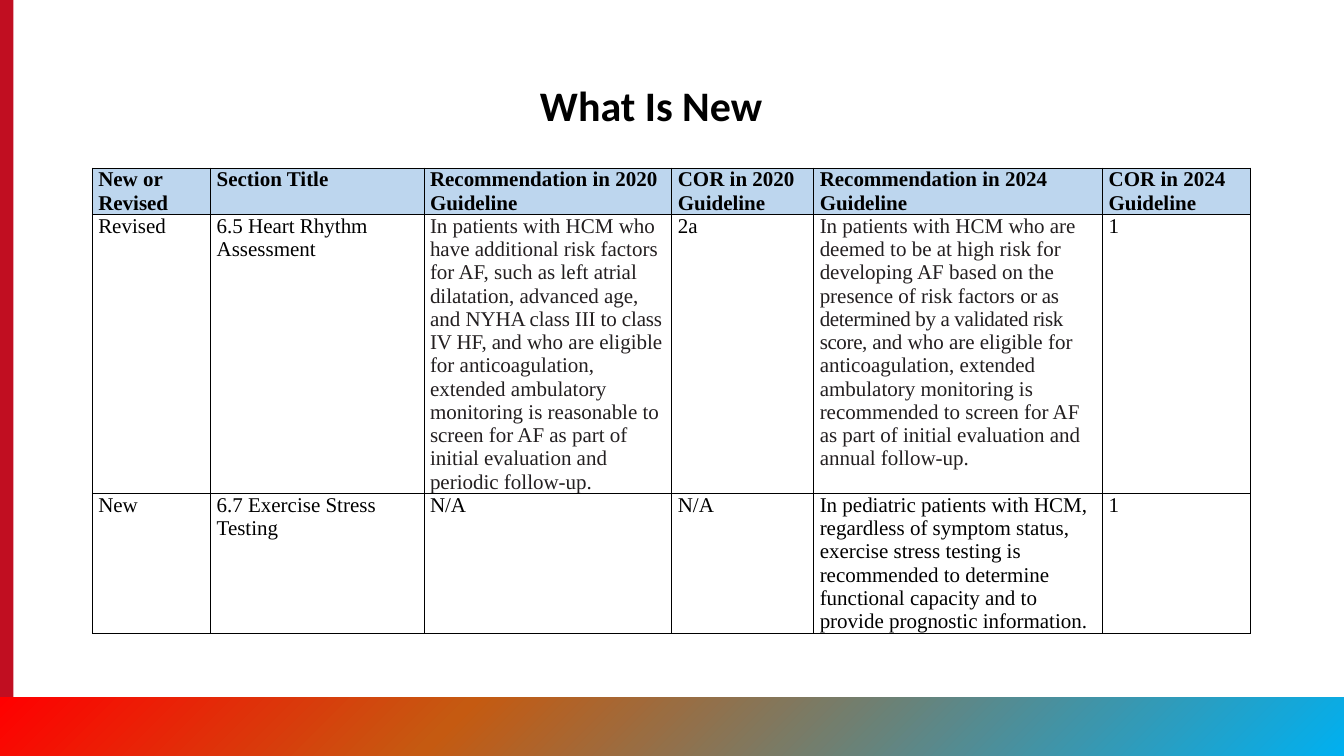
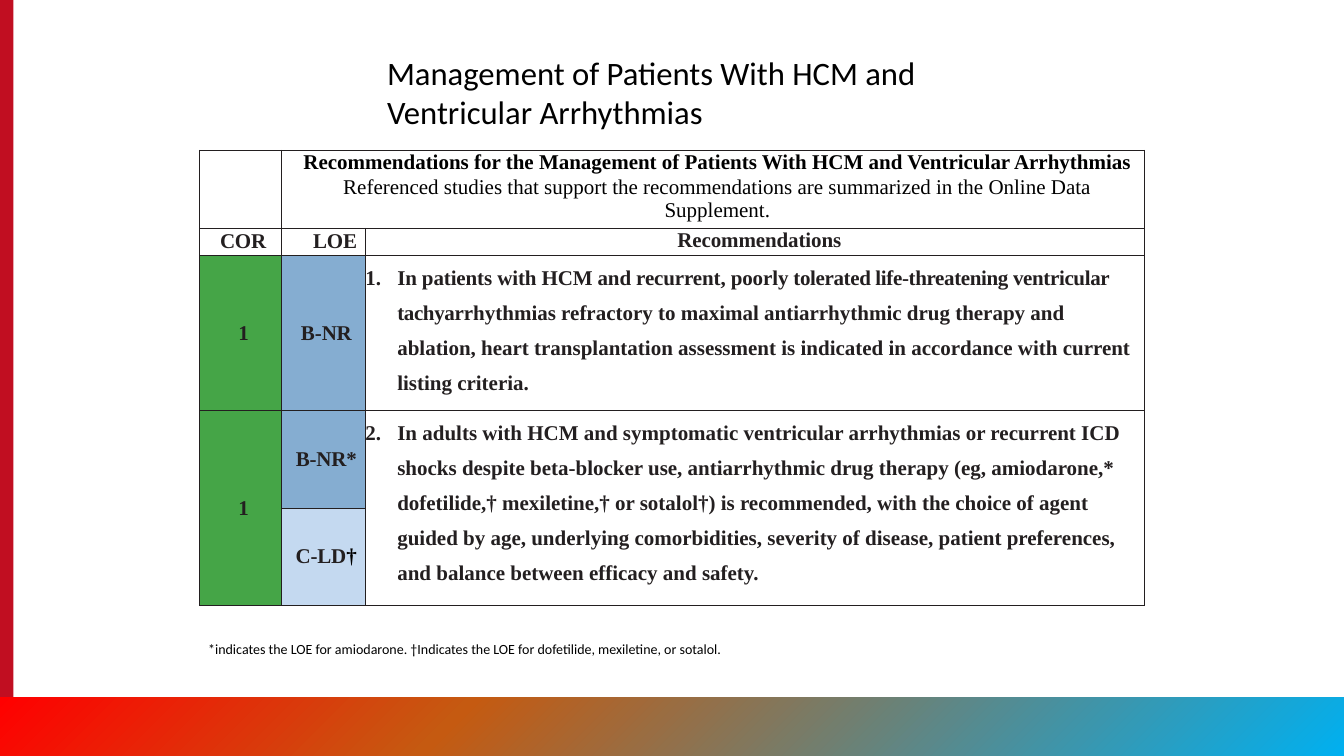
from dataclasses import dataclass
from typing import Optional

from lxml.etree import SubElement
from pptx import Presentation
from pptx.dml.color import RGBColor
from pptx.enum.shapes import MSO_SHAPE
from pptx.enum.text import MSO_ANCHOR, PP_ALIGN
from pptx.oxml.ns import qn
from pptx.util import Inches, Pt

SLIDE_W, SLIDE_H = 16, 9
BAND_TOP, STRIPE_W = 8.3, 0.16

BLACK = RGBColor(0x00, 0x00, 0x00)
INK = RGBColor(0x23, 0x1F, 0x20)
CRIMSON = RGBColor(0xC1, 0x0E, 0x21)
RED = RGBColor(0xFF, 0x00, 0x00)
ORANGE = RGBColor(0xC5, 0x5A, 0x11)
SKY = RGBColor(0x00, 0xB0, 0xF0)
HEADER_BLUE = RGBColor(0xBD, 0xD6, 0xEE)
COR_GREEN = RGBColor(0x45, 0xA5, 0x47)
LOE_BLUE = RGBColor(0x85, 0xAD, 0xD1)
LOE_PALE = RGBColor(0xC4, 0xD9, 0xF0)

BAND_STOPS = [(0, RED), (34, ORANGE), (100, SKY)]
TITLE_FONT, TABLE_FONT = "Calibri", "Times New Roman"
TABLE_SIZE = 18


@dataclass(frozen=True)
class Span:
    text: str
    colour: RGBColor = BLACK
    bold: bool = False
    tracking: float = 0


@dataclass(frozen=True)
class Para:
    spans: tuple[Span, ...]
    centred: bool = False
    left: float = 0
    hanging: float = 0
    before: float = 0
    number: Optional[int] = None


@dataclass(frozen=True)
class Cell:
    paras: tuple[Para, ...]
    fill: Optional[RGBColor] = None
    middle: bool = False
    rows: int = 1
    cols: int = 1


@dataclass(frozen=True)
class Grid:
    left: float
    top: float
    cols: tuple[float, ...]
    rows: tuple[float, ...]
    side_inset: float
    border: RGBColor


def add_span(paragraph, span: Span, font: str, size: float) -> None:
    run = paragraph.add_run()
    run.text = span.text
    run.font.name = font
    run.font.size = Pt(size)
    run.font.bold = span.bold
    run.font.color.rgb = span.colour
    if span.tracking:
        run._r.get_or_add_rPr().set("spc", str(round(span.tracking * 100)))


def add_solid(parent, colour: RGBColor) -> None:
    fill = SubElement(parent, qn("a:solidFill"))
    SubElement(fill, qn("a:srgbClr"), val=str(colour))


def number_paragraph(paragraph, start: int) -> None:
    properties = paragraph._p.get_or_add_pPr()
    colour = SubElement(properties, qn("a:buClr"))
    SubElement(colour, qn("a:srgbClr"), val=str(INK))
    SubElement(properties, qn("a:buFont"), typeface=TABLE_FONT)
    SubElement(properties, qn("a:buAutoNum"), type="arabicPeriod", startAt=str(start))
    paragraph.line_spacing = 1.5


def fill_paragraph(paragraph, para: Para) -> None:
    properties = paragraph._p.get_or_add_pPr()
    properties.set("marL", str(Inches(para.left)))
    properties.set("indent", str(Inches(para.hanging)))
    if para.number:
        number_paragraph(paragraph, para.number)
    if para.before:
        paragraph.space_before = Pt(para.before)
    paragraph.alignment = PP_ALIGN.CENTER if para.centred else PP_ALIGN.LEFT
    for span in para.spans:
        add_span(paragraph, span, TABLE_FONT, TABLE_SIZE)


def style_cell(cell, grid: Grid) -> None:
    cell.margin_left = cell.margin_right = Inches(grid.side_inset)
    cell.margin_top = cell.margin_bottom = 0
    properties = cell._tc.get_or_add_tcPr()
    for side in ("lnL", "lnR", "lnT", "lnB"):
        line = SubElement(properties, qn(f"a:{side}"), w=str(Pt(1)))
        add_solid(line, grid.border)
    cell.fill.background()


def fill_cell(cell, content: Cell) -> None:
    if content.fill is not None:
        cell.fill.solid()
        cell.fill.fore_color.rgb = content.fill
    cell.vertical_anchor = MSO_ANCHOR.MIDDLE if content.middle else MSO_ANCHOR.TOP
    frame = cell.text_frame
    for index, para in enumerate(content.paras):
        fill_paragraph(frame.add_paragraph() if index else frame.paragraphs[0], para)


def add_grid(slide, grid: Grid, contents: list[list[Optional[Cell]]]) -> None:
    """Draw a bordered table; None leaves a cell empty or covered by a merge."""
    table = slide.shapes.add_table(
        len(grid.rows), len(grid.cols), Inches(grid.left), Inches(grid.top),
        Inches(sum(grid.cols)), Inches(sum(grid.rows))).table
    table.first_row = table.horz_banding = False
    for column, width in zip(table.columns, grid.cols):
        column.width = Inches(width)
    for row, height in zip(table.rows, grid.rows):
        row.height = Inches(height)
    for r, row_contents in enumerate(contents):
        for c, content in enumerate(row_contents):
            cell = table.cell(r, c)
            style_cell(cell, grid)
            if content is None:
                continue
            if content.rows * content.cols > 1:
                cell.merge(table.cell(r + content.rows - 1, c + content.cols - 1))
            fill_cell(cell, content)


def add_bar(slide, left: float, top: float, width: float, height: float):
    bar = slide.shapes.add_shape(
        MSO_SHAPE.RECTANGLE, Inches(left), Inches(top), Inches(width), Inches(height))
    bar.shadow.inherit = False
    bar.line.fill.background()
    return bar


def add_base_slide(deck):
    """Add a blank slide with the side stripe and the gradient footer band."""
    slide = deck.slides.add_slide(deck.slide_layouts[6])
    stripe = add_bar(slide, 0, 0, STRIPE_W, SLIDE_H)
    stripe.fill.solid()
    stripe.fill.fore_color.rgb = CRIMSON

    band = add_bar(slide, 0, BAND_TOP, SLIDE_W, SLIDE_H - BAND_TOP)
    band.fill.gradient()
    gradient = band._element.spPr.find(qn("a:gradFill"))
    for child in list(gradient):
        gradient.remove(child)
    stops = SubElement(gradient, qn("a:gsLst"))
    for percent, colour in BAND_STOPS:
        stop = SubElement(stops, qn("a:gs"), pos=str(percent * 1000))
        SubElement(stop, qn("a:srgbClr"), val=str(colour))
    SubElement(gradient, qn("a:lin"), ang=str(45 * 60000), scaled="0")
    return slide


def add_label(slide, box: tuple[float, float, float, float], span: Span, size: float,
              anchor: MSO_ANCHOR = MSO_ANCHOR.TOP) -> None:
    frame = slide.shapes.add_textbox(*map(Inches, box)).text_frame
    frame.word_wrap = True
    frame.vertical_anchor = anchor
    add_span(frame.paragraphs[0], span, TITLE_FONT, size)


def plain(*spans: Span, fill: Optional[RGBColor] = None) -> Cell:
    return Cell((Para(spans),), fill)


def centred(*spans: Span, left: float, hanging: float = 0, fill: Optional[RGBColor] = None,
            middle: bool = True, rows: int = 1) -> Cell:
    return Cell((Para(spans, True, left, hanging),), fill, middle, rows)


def numbered(number: int, *spans: Span, rows: int = 1) -> Cell:
    return Cell((Para(spans, left=0.38, hanging=-0.38, number=number),), rows=rows)


def strong(text: str, tracking: float = 0) -> Span:
    return Span(text, INK, True, tracking)


def add_whats_new(deck) -> None:
    slide = add_base_slide(deck)
    headings = ("New or Revised", "Section Title", "Recommendation in 2020 Guideline",
                "COR in 2020 Guideline", "Recommendation in 2024 Guideline",
                "COR in 2024 Guideline")
    rhythm_2020 = plain(
        Span("In patients with HCM who have additional risk factors for AF, such as left "
             "atrial dilatation, advanced age, and ", INK),
        Span("NYHA class III to class IV HF, and", INK, tracking=-0.1),
        Span(" who are eligible for anticoagulation, extended ambulatory monitoring is "
             "reasonable to screen for AF as part of initial evaluation and periodic "
             "follow-up.", INK))
    rhythm_2024 = plain(
        Span("In patients with HCM who are deemed to be at high risk for developing AF "
             "based on the presence of risk factors ", INK),
        Span("or as determined by a validated risk score, ", INK, tracking=-0.3),
        Span("and", INK, tracking=-0.1),
        Span(" who are eligible for anticoagulation, extended ambulatory monitoring is "
             "recommended to screen for AF as part of initial evaluation and annual "
             "follow-up.", INK))
    exercise_2024 = ("In pediatric patients with HCM, regardless of symptom status, exercise "
                     "stress testing is recommended to determine functional capacity and to "
                     "provide prognostic information.")
    changes = [
        [plain(Span(heading, bold=True), fill=HEADER_BLUE) for heading in headings],
        [plain(Span("Revised")), plain(Span("6.5 Heart Rhythm Assessment")), rhythm_2020,
         plain(Span("2a")), rhythm_2024, plain(Span("1"))],
        [plain(Span(text)) for text in
         ("New", "6.7 Exercise Stress Testing", "N/A", "N/A", exercise_2024, "1")],
    ]
    grid = Grid(1.1, 2, (1.41, 2.54, 2.95, 1.69, 3.44, 1.76), (0.54, 3.3, 1.65), 0.07, BLACK)
    add_grid(slide, grid, changes)
    add_label(slide, (6.33, 0.92, 3.33, 0.67), Span("What Is New", bold=True), 36,
              MSO_ANCHOR.BOTTOM)


def add_arrhythmias(deck) -> None:
    slide = add_base_slide(deck)
    add_label(slide, (4.51, 0.58, 6.99, 1.04),
              Span("Management of Patients With HCM and Ventricular Arrhythmias"), 28)
    heading = Cell((
        Para((Span("Recommendations for the Management of Patients With HCM and "
                   "Ventricular Arrhythmias", bold=True),), True, 0.1),
        Para((Span("Referenced studies that support the recommendations are summarized in "
                   "the Online Data Supplement."),), True, 0.1, before=2),
    ), cols=2)
    transplant = numbered(
        1,
        strong("In patients with HCM and recurrent, poorly ", -0.1),
        strong("tolerated life-threatening ventricular tachyar", -0.3),
        strong("rhythmias refractory to maximal antiarrhythmic drug therapy and ablation, "
               "heart transplantation assessment is indicated in accordance with current "
               "listing criteria."))
    drug_therapy = numbered(
        2,
        strong("In adults with HCM and symptomatic ventricular arrhythmias or recurrent ICD "
               "shocks despite beta-blocker use, antiarrhythmic drug therapy (eg, "
               "amiodarone,* dofetilide,† mexiletine,† or sotalol†) is recommended, with "
               "the choice of agent guided by age, underlying comorbidities, severity of "
               "disease, patient preferences, and balance between efficacy and safety."),
        rows=2)
    recommendations = [
        [None, heading, None],
        [centred(strong("COR", -0.2), left=0.06), centred(strong("LOE", -0.2), left=0.28),
         centred(strong("Recommendations", -0.1), left=0.1, middle=False)],
        [centred(strong("1"), left=0.07, fill=COR_GREEN),
         centred(strong("B-"), strong("NR", -0.2), left=0.07, fill=LOE_BLUE), transplant],
        [centred(strong("1"), left=0.07, fill=COR_GREEN, rows=2),
         centred(strong("B-NR*", -0.2), left=0.26, hanging=-0.19, fill=LOE_BLUE),
         drug_therapy],
        [None, centred(strong("C-LD", -0.2), Span("†", BLACK, True, -0.2), left=0.26,
                       hanging=-0.19, fill=LOE_PALE), None],
    ]
    grid = Grid(2.38, 1.79, (0.97, 1, 9.28), (0.92, 0.32, 1.85, 1.16, 1.16), 0, INK)
    add_grid(slide, grid, recommendations)
    add_label(slide, (2.38, 7.58, 8, 0.3),
              Span("*indicates the LOE for amiodarone. †Indicates the LOE for dofetilide, "
                   "mexiletine, or sotalol."), 12)


def main() -> None:
    deck = Presentation()
    deck.slide_width, deck.slide_height = Inches(SLIDE_W), Inches(SLIDE_H)
    add_whats_new(deck)
    add_arrhythmias(deck)
    deck.save("out.pptx")


if __name__ == "__main__":
    main()
